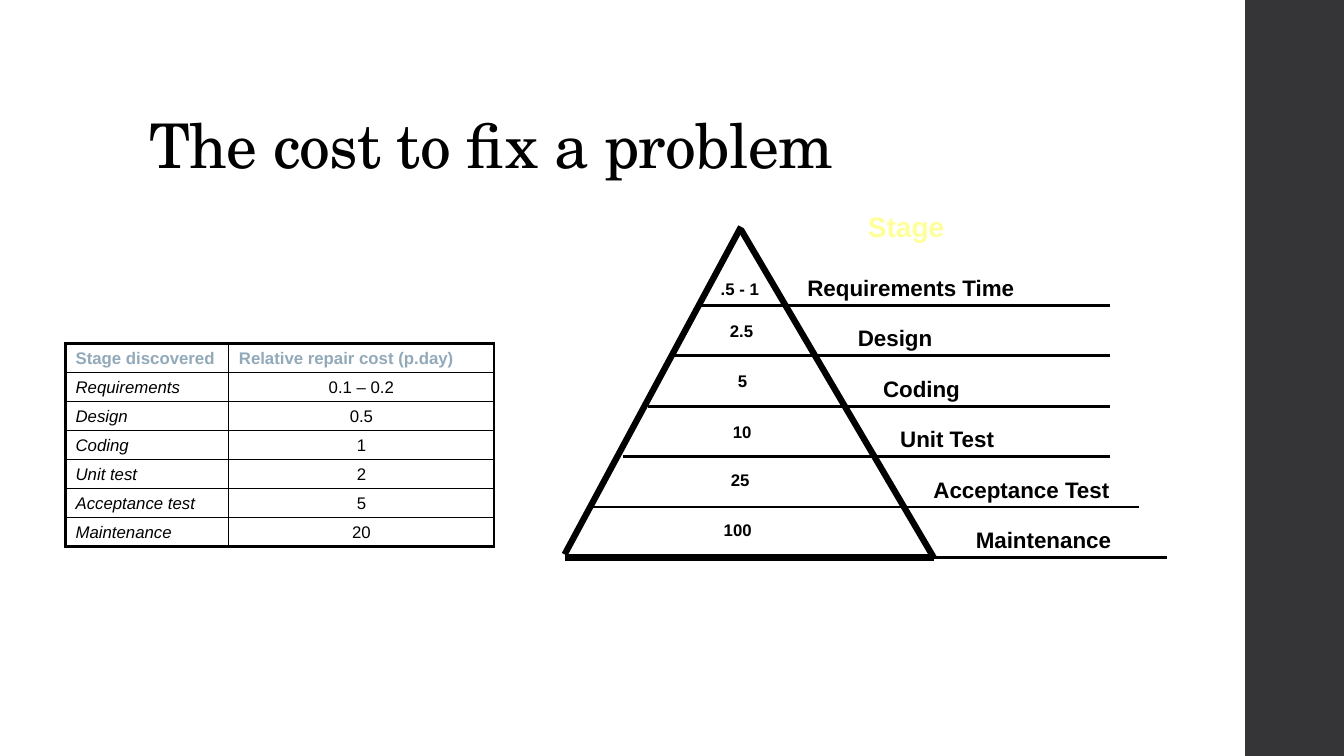
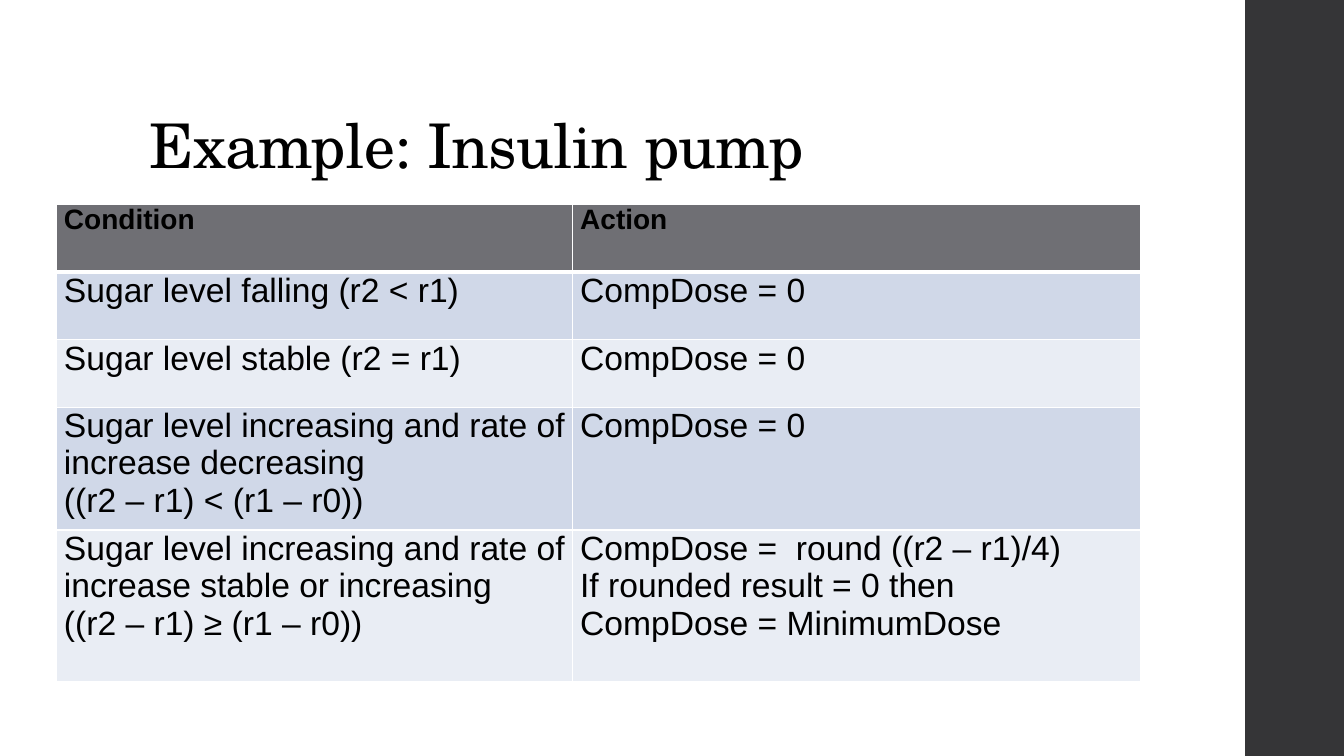
from lxml import etree
from pptx import Presentation
from pptx import util as u
from pptx.dml.color import RGBColor
from pptx.enum import shapes, text
from pptx.oxml.ns import qn

BLACK = RGBColor(0x00, 0x00, 0x00)
WHITE = RGBColor(0xFF, 0xFF, 0xFF)
BAND = RGBColor(0x35, 0x35, 0x37)
BLUE_GREY = RGBColor(0x92, 0xA9, 0xB9)
YELLOW = RGBColor(0xFF, 0xFF, 0x99)
HEADER_GREY = RGBColor(0x6F, 0x6F, 0x74)
ROW_FILLS = (RGBColor(0xD0, 0xD8, 0xE8), RGBColor(0xE9, 0xED, 0xF4))

TITLE_FONT = "TeX Gyre Schola"
BODY_FONT = "Arial"

COST_ROWS = [
    ("Stage discovered", "Relative repair cost (p.day)"),
    ("Requirements", "0.1 – 0.2"),
    ("Design", "0.5"),
    ("Coding", "1"),
    ("Unit test", "2"),
    ("Acceptance test", "5"),
    ("Maintenance", "20"),
]

# Cost, its left and rise above the layer line; stage, its left; line start and end
LAYERS = [
    (".5 - 1", 70.5, 3.1, "Requirements Time", 79.1, 69.3, 110.1),
    ("2.5", 71.4, 4, "Design", 84.1, 66.8, 110.1),
    ("5", 72.2, 4, "Coding", 86.6, 64.3, 110.1),
    ("10", 71.7, 4, "Unit Test", 88.3, 61.8, 110.1),
    ("25", 71.5, 4.2, "Acceptance Test", 91.6, 58.5, 113),
    ("100", 70.8, 4.2, "Maintenance", 95.8, 90.6, 115.7),
]
FIRST_LAYER, LAYER_HEIGHT = 30.3, 5

# Line breaks inside a paragraph are \v, new paragraphs are \n
DOSE_ROWS = [
    ("Condition", "Action"),
    ("Sugar level falling (r2 < r1)", "CompDose = 0"),
    ("Sugar level stable (r2 = r1)", "CompDose = 0"),
    ("Sugar level increasing and rate of increase decreasing\v"
     "((r2 – r1) < (r1 – r0))", "CompDose = 0"),
    ("Sugar level increasing and rate of increase stable or increasing\v"
     "((r2 – r1) ≥ (r1 – r0))",
     "CompDose =  round ((r2 – r1)/4)\nIf rounded result = 0 then\n"
     "CompDose = MinimumDose"),
]


def grid(steps):
    """Length of a number of grid steps, ten to the inch."""
    return u.Inches(steps / 10)


def set_font(frame, size, color=BLACK, name=BODY_FONT, bold=False, italic=False,
             align=text.PP_ALIGN.LEFT):
    for paragraph in frame.paragraphs:
        paragraph.alignment = align
        font = paragraph.font
        font.name, font.size, font.color.rgb = name, u.Pt(size), color
        font.bold, font.italic = bold, italic


# Shared parts

def prepare_layout(presentation, slide):
    """Move the side band to the layout and place its title."""
    layout = slide.slide_layout
    left = grid(123.5)
    band = slide.shapes.add_shape(
        shapes.MSO_SHAPE.RECTANGLE, left, 0,
        presentation.slide_width - left, presentation.slide_height)
    band.shadow.inherit = False
    band.fill.solid()
    band.fill.fore_color.rgb = BAND
    band.line.fill.background()
    layout.shapes.element.insert(2, band.element)
    title = layout.placeholders[0]
    title.left, title.top = grid(13.8), grid(4)
    title.width, title.height = grid(106), grid(14.5)


def add_title(slide, wording):
    frame = slide.shapes.title.text_frame
    frame.text = wording
    frame.vertical_anchor = text.MSO_ANCHOR.BOTTOM
    set_font(frame, 44, name=TITLE_FONT)
    paragraph = frame.paragraphs[0]
    paragraph.line_spacing = 0.9
    paragraph.runs[0].font._element.set("spc", "-50")


# Kinds of element

def add_label(slide, wording, left, top, width, size, color=BLACK):
    box = slide.shapes.add_textbox(grid(left), grid(top), grid(width), grid(3.7))
    box.text_frame.word_wrap = True
    box.text_frame.text = wording
    set_font(box.text_frame, size, color, bold=True)


def add_line(slide, start, end, weight):
    line = slide.shapes.add_connector(
        shapes.MSO_CONNECTOR.STRAIGHT, *map(grid, start + end))
    line.line.color.rgb = BLACK
    line.line.width = u.Pt(weight)
    etree.SubElement(line.element.spPr, qn("a:effectLst"))


def set_borders(cell, color, left, right, top, bottom):
    """Draw the four sides of a cell, with weights in points."""
    properties = cell._tc.get_or_add_tcPr()
    for side, weight in zip("LRTB", (left, right, top, bottom)):
        line = etree.SubElement(properties, qn("a:ln" + side), w=str(u.Pt(weight)))
        fill = etree.SubElement(line, qn("a:solidFill"))
        etree.SubElement(fill, qn("a:srgbClr"), val=str(color))


def add_table(slide, rows, left, top, widths, heights, style_cell):
    table = slide.shapes.add_table(
        len(rows), len(widths), grid(left), grid(top),
        grid(sum(widths)), grid(sum(heights))).table
    for column, width in zip(table.columns, widths):
        column.width = grid(width)
    for row, height in zip(table.rows, heights):
        row.height = grid(height)
    for row_index, row in enumerate(rows):
        for column_index, wording in enumerate(row):
            cell = table.cell(row_index, column_index)
            cell.text_frame.text = wording
            style_cell(cell, row_index, column_index)


def style_cost_cell(cell, row, column):
    header, last = row == 0, row == len(COST_ROWS) - 1
    outer, inner = 2.25, 1
    set_borders(cell, BLACK,
                left=inner if column else outer,
                right=outer if column else inner,
                top=outer if header else inner,
                bottom=outer if last else inner)
    cell.fill.background()
    centred = column == 1 and not header
    set_font(cell.text_frame, 12, BLUE_GREY if header else BLACK, bold=header,
             italic=column == 0 and not header,
             align=text.PP_ALIGN.CENTER if centred else text.PP_ALIGN.LEFT)


def style_dose_cell(cell, row, column):
    header = row == 0
    set_borders(cell, WHITE, left=1, right=1,
                top=3 if row == 1 else 1, bottom=3 if header else 1)
    cell.fill.solid()
    cell.fill.fore_color.rgb = HEADER_GREY if header else ROW_FILLS[(row - 1) % 2]
    cell.margin_left = cell.margin_right = grid(0.75)
    cell.margin_top, cell.margin_bottom = 0, grid(1)
    set_font(cell.text_frame, 20 if header else 24, bold=header)


def add_pyramid(slide):
    # Outline
    base = 55.3
    add_line(slide, (73.5, 22.8), (92.6, base), 4.5)
    add_line(slide, (92.6, base), (56, base), 4.5)
    add_line(slide, (56, 55), (73.5, 22.5), 4.5)
    # Layers with their cost and stage
    add_label(slide, "Stage", 85.1, 20.3, 12, 20, YELLOW)
    for index, (cost, cost_left, rise, stage, stage_left, start, end) in enumerate(LAYERS):
        level = FIRST_LAYER + index * LAYER_HEIGHT
        add_line(slide, (start, level), (end, level), 2)
        add_label(slide, cost, cost_left, level - rise, 8, 12)
        add_label(slide, stage, stage_left, level - 3.6, 24, 16)


def main():
    presentation = Presentation()
    presentation.slide_width, presentation.slide_height = u.Inches(13.33), u.Inches(7.5)
    title_only = presentation.slide_layouts[5]

    # Repair cost by stage
    slide = presentation.slides.add_slide(title_only)
    prepare_layout(presentation, slide)
    add_title(slide, "The cost to fix a problem")
    add_table(slide, COST_ROWS, 6.5, 34.1, (16.2, 26.3),
              [2.88] * len(COST_ROWS), style_cost_cell)
    add_pyramid(slide)

    # Insulin pump conditions
    slide = presentation.slides.add_slide(title_only)
    add_title(slide, "Example: Insulin pump")
    add_table(slide, DOSE_ROWS, 5.6, 20.3, (51.2, 56.3),
              (6.7, 6.7, 6.7, 12.2, 15), style_dose_cell)

    presentation.save("out.pptx")


if __name__ == "__main__":
    main()
